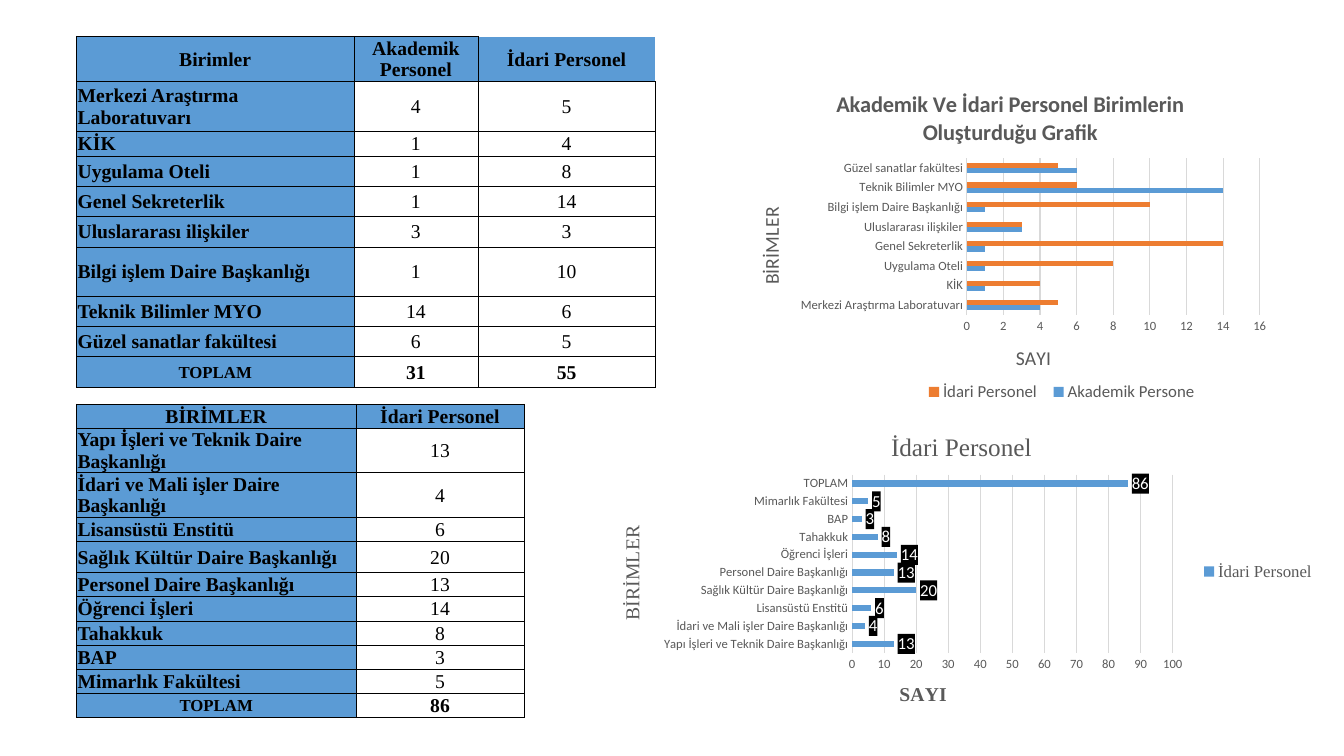
from dataclasses import dataclass

from lxml import etree
from pptx import Presentation, util as u
from pptx.chart.data import CategoryChartData
from pptx.dml.color import RGBColor
from pptx.enum import chart as ch, text as t
from pptx.oxml import ns

COLORS = {"blue": "5B9BD5", "orange": "ED7D31", "grey": "595959",
          "grid": "D9D9D9", "black": "000000", "white": "FFFFFF"}
SERIF, SANS = "Times New Roman", "Calibri"
TOTAL = "TOPLAM"
Box = tuple[float, float, float, float]


@dataclass
class StaffTable:
    left: float
    top: float
    widths: list[float]
    heights: list[float]
    rows: list[tuple]
    open_corner: bool = False


@dataclass
class StaffChart:
    box: Box
    title: str
    title_format: dict
    value_title: str
    value_title_bold: bool
    text_font: str
    legend_side: ch.XL_LEGEND_POSITION
    plot_area: Box
    units: list[str]
    series: dict[str, tuple]
    max_value: int
    step: int
    legend_area: Box | None = None
    labelled: bool = False


def rgb(color: str) -> RGBColor:
    return RGBColor.from_string(COLORS[color])


def format_font(font, color: str, size: float, **values) -> None:
    for name, value in {"size": u.Pt(size), "bold": False, **values}.items():
        setattr(font, name, value)
    font.color.rgb = rgb(color)


def solid_fill(parent, color: str) -> None:
    fill = etree.SubElement(parent, ns.qn("a:solidFill"))
    etree.SubElement(fill, ns.qn("a:srgbClr"), val=COLORS[color])


def draw_borders(cell, sides: str) -> None:
    properties = cell._tc.get_or_add_tcPr()
    for index, side in enumerate(sides):
        line = etree.Element(ns.qn(f"a:ln{side}"), w=str(u.Pt(0.5)))
        solid_fill(line, "black")
        properties.insert(index, line)


def draw_table(slide, staff: StaffTable) -> None:
    table = slide.shapes.add_table(
        len(staff.rows), len(staff.widths), u.Inches(staff.left), u.Inches(staff.top),
        u.Inches(sum(staff.widths)), u.Inches(sum(staff.heights))).table
    table.horz_banding = False
    for column, width in zip(table.columns, staff.widths):
        column.width = u.Inches(width)
    for row, height in zip(table.rows, staff.heights):
        row.height = u.Inches(height)

    last_column = len(staff.widths) - 1
    for r, values in enumerate(staff.rows):
        header, total = r == 0, values[0] == TOTAL
        for c, value in enumerate(values):
            cell = table.cell(r, c)
            cell_format = {"margin_left": u.Inches(0.01), "margin_right": u.Inches(0.01),
                           "margin_top": u.Inches(0.01), "margin_bottom": 0,
                           "vertical_anchor": t.MSO_ANCHOR.MIDDLE, "text": str(value)}
            for name, setting in cell_format.items():
                setattr(cell, name, setting)
            paragraph = cell.text_frame.paragraphs[0]
            unit = c == 0 and not header and not total
            paragraph.alignment = t.PP_ALIGN.LEFT if unit else t.PP_ALIGN.CENTER
            format_font(paragraph.runs[0].font, "black", 12 if total and c == 0 else 14,
                        name=SERIF, bold=header or total or c == 0)
            if header or c == 0:
                cell.fill.solid()
                cell.fill.fore_color.rgb = rgb("blue")
            else:
                cell.fill.background()
            corner = staff.open_corner and header and c == last_column
            draw_borders(cell, "LB" if corner else "LRTB")


def place(parent, index: int, area: Box, inner: bool = False) -> None:
    """Fix a chart part at fractions of the chart's width and height."""
    for automatic in parent.findall(ns.qn("c:layout")):
        parent.remove(automatic)
    layout = etree.Element(ns.qn("c:layout"))
    manual = etree.SubElement(layout, ns.qn("c:manualLayout"))
    settings = {"layoutTarget": "inner"} if inner else {}
    settings |= {"xMode": "edge", "yMode": "edge"} | dict(zip("xywh", area))
    for name, value in settings.items():
        etree.SubElement(manual, ns.qn(f"c:{name}"), val=str(value))
    parent.insert(index, layout)


def write_title(owner, wording: str, **values) -> None:
    frame = owner.text_frame
    frame.text = wording
    format_font(frame.paragraphs[0].runs[0].font, "grey", **values)


def label_bars(series) -> None:
    labels = series.data_labels
    labels.show_value = True
    labels.position = ch.XL_LABEL_POSITION.OUTSIDE_END
    format_font(labels.font, "white", 12, name=SANS)
    background = etree.Element(ns.qn("c:spPr"))
    solid_fill(background, "black")
    labels._element.find(ns.qn("c:txPr")).addprevious(background)


def draw_chart(slide, staff: StaffChart) -> None:
    data = CategoryChartData()
    data.categories = staff.units
    for name, values in staff.series.items():
        data.add_series(name, values)
    chart = slide.shapes.add_chart(ch.XL_CHART_TYPE.BAR_CLUSTERED,
                                   *map(u.Inches, staff.box), data).chart
    format_font(chart.font, "grey", 10, name=SANS)
    chart.has_title = True
    write_title(chart.chart_title, staff.title, **staff.title_format)
    chart.chart_title.include_in_layout = False

    plot = chart.plots[0]
    plot.gap_width, plot.vary_by_categories = 182, False
    for series, color in zip(plot.series, ("blue", "orange")):
        series.format.fill.solid()
        series.format.fill.fore_color.rgb = rgb(color)
        if staff.labelled:
            label_bars(series)

    units, values = chart.category_axis, chart.value_axis
    for axis, wording, bold in ((units, "BİRİMLER", False),
                                (values, staff.value_title, staff.value_title_bold)):
        axis.major_tick_mark = axis.minor_tick_mark = ch.XL_TICK_MARK.NONE
        format_font(axis.tick_labels.font, "grey", 9, name=SANS)
        write_title(axis.axis_title, wording, size=14, name=staff.text_font, bold=bold)
    values.format.line.fill.background()
    values.minimum_scale, values.maximum_scale, values.major_unit = 0, staff.max_value, staff.step
    values.has_major_gridlines = True
    for line in (units.format.line, values.major_gridlines.format.line):
        line.color.rgb = rgb("grid")
        line.width = u.Pt(0.75)

    chart.has_legend = True
    legend = chart.legend
    legend.position, legend.include_in_layout = staff.legend_side, False
    format_font(legend.font, "grey", 12, name=staff.text_font)
    if staff.legend_area:
        place(legend._element, 1, staff.legend_area)
    place(chart._chartSpace.chart.plotArea, 0, staff.plot_area, inner=True)


ACADEMIC_UNITS = [
    ("Merkezi Araştırma Laboratuvarı", 4, 5), ("KİK", 1, 4), ("Uygulama Oteli", 1, 8),
    ("Genel Sekreterlik", 1, 14), ("Uluslararası ilişkiler", 3, 3),
    ("Bilgi işlem Daire Başkanlığı", 1, 10), ("Teknik Bilimler MYO", 14, 6),
    ("Güzel sanatlar fakültesi", 6, 5)]
OFFICES = [
    ("Yapı İşleri ve Teknik Daire Başkanlığı", 13), ("İdari ve Mali işler Daire Başkanlığı", 4),
    ("Lisansüstü Enstitü", 6), ("Sağlık Kültür Daire Başkanlığı", 20),
    ("Personel Daire Başkanlığı", 13), ("Öğrenci İşleri", 14), ("Tahakkuk", 8),
    ("BAP", 3), ("Mimarlık Fakültesi", 5), (TOTAL, 86)]


def main() -> None:
    deck = Presentation()
    deck.slide_width, deck.slide_height = u.Inches(13.33), u.Inches(7.5)
    slide = deck.slides.add_slide(deck.slide_layouts[6])

    unit_names, academic, administrative = zip(*ACADEMIC_UNITS)
    office_names, office_staff = zip(*OFFICES)
    draw_table(slide, StaffTable(
        0.76, 0.36, [2.75, 1.23, 1.76], [0.45, 0.49, 0.25] + [0.3] * 3 + [0.49] + [0.3] * 3,
        [("Birimler", "Akademik Personel", "İdari Personel"), *ACADEMIC_UNITS,
         (TOTAL, sum(academic), sum(administrative))], open_corner=True))
    draw_chart(slide, StaffChart(
        (7.33, 0.72, 5.38, 3.54), "Akademik Ve İdari Personel Birimlerin Oluşturduğu Grafik",
        {"size": 16, "bold": True, "name": SANS}, "SAYI", False, SANS,
        ch.XL_LEGEND_POSITION.BOTTOM, (0.42, 0.24, 0.54, 0.44), list(unit_names),
        {"Akademik Persone": academic, "İdari Personel": administrative}, 16, 2,
        legend_area=(0.33, 0.85, 0.53, 0.09)))
    draw_table(slide, StaffTable(
        0.76, 4.01, [2.77, 1.67], [0.24, 0.43, 0.43, 0.24, 0.31] + [0.24] * 6,
        [("BİRİMLER", "İdari Personel"), *OFFICES]))
    draw_chart(slide, StaffChart(
        (5.92, 4.12, 7.23, 3.1), "İdari Personel", {"size": 18, "name": SERIF},
        "SAYI", True, SERIF, ch.XL_LEGEND_POSITION.RIGHT, (0.35, 0.19, 0.44, 0.57),
        list(office_names), {"İdari Personel": office_staff}, 100, 10, labelled=True))
    deck.save("out.pptx")


if __name__ == "__main__":
    main()
